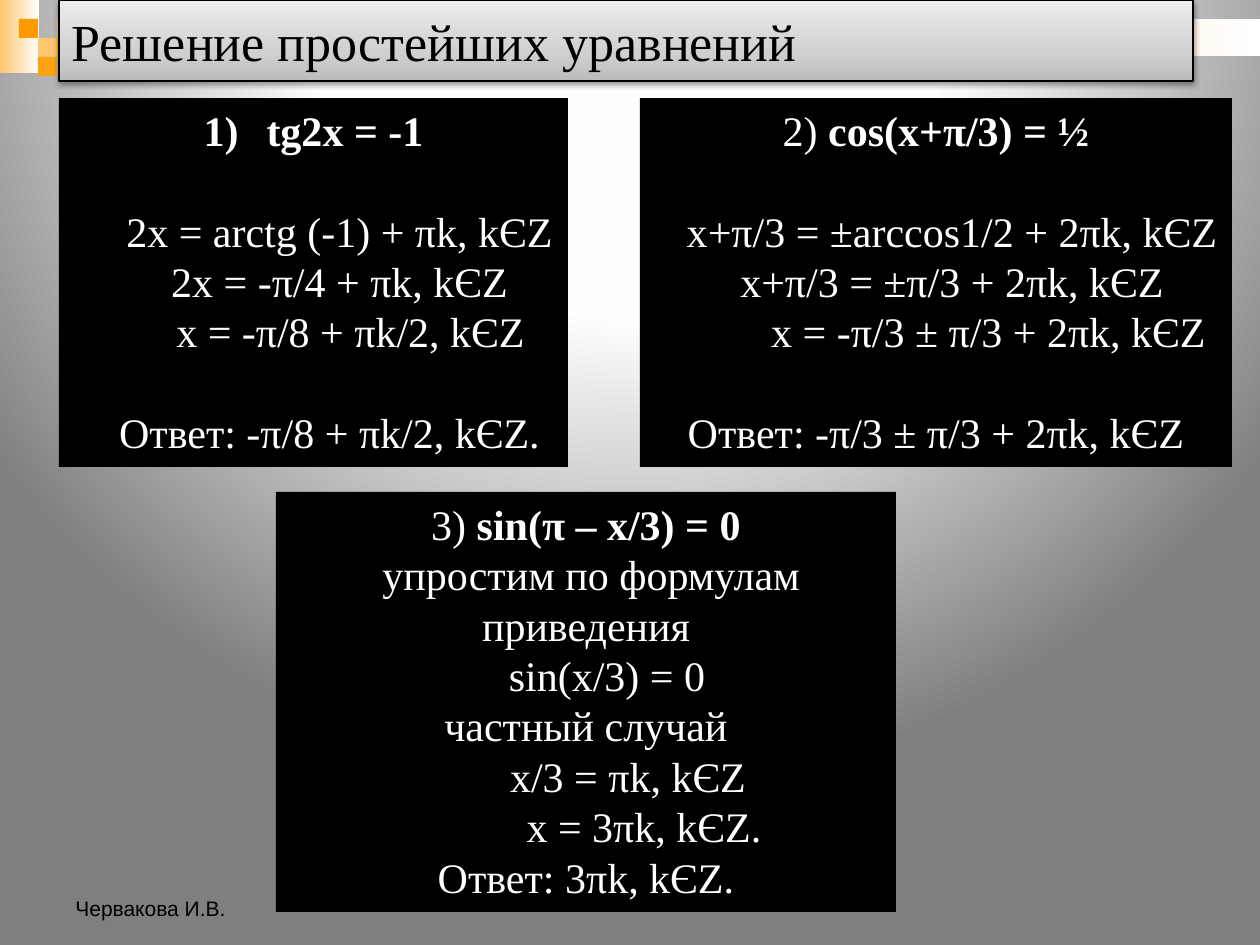
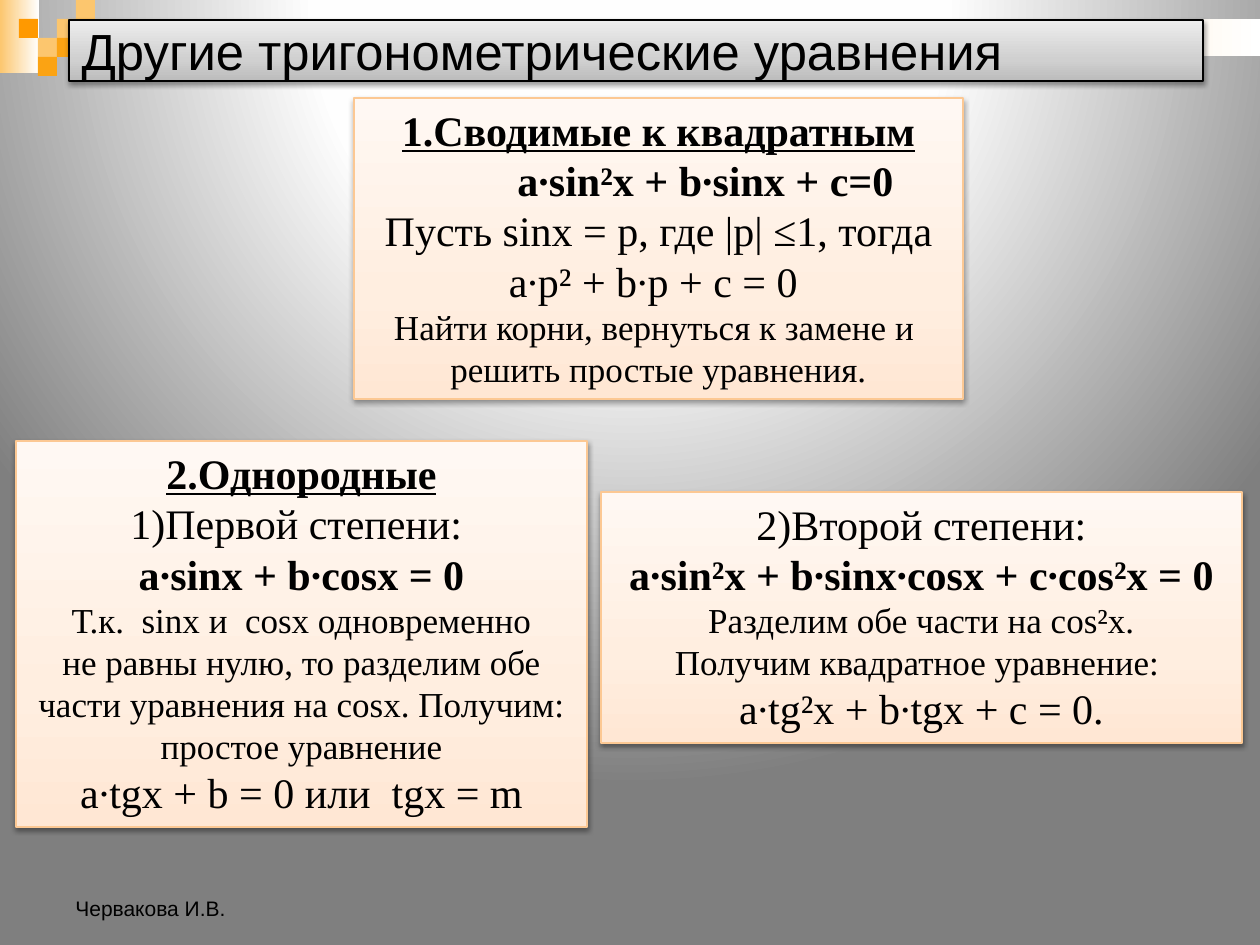
from dataclasses import dataclass

from lxml.etree import SubElement
from pptx import Presentation
from pptx.dml.color import RGBColor
from pptx.enum.shapes import MSO_SHAPE
from pptx.enum.text import MSO_ANCHOR, MSO_AUTO_SIZE, PP_ALIGN
from pptx.oxml import parse_xml
from pptx.oxml.ns import nsdecls, qn
from pptx.util import Emu, Pt

SERIF, SANS = "Times New Roman", "Arial"
BLACK, WHITE = "000000", "FFFFFF"
ORANGE, AMBER, PEACH = "FF9900", "FBA313", "FCC66E"
CARD_BORDER = "FCC893"

LEFT_TO_RIGHT = '<a:lin ang="0" scaled="0"/>'
BOTTOM_TO_TOP = '<a:lin ang="16200000" scaled="0"/>'
FROM_ABOVE = ('<a:path path="circle">'
              '<a:fillToRect l="50000" t="-80000" r="50000" b="180000"/></a:path>')
BACKDROP = ([(0, WHITE), (40, "FEFEFE"), (100, "7F7F7F")], FROM_ABOVE)
TITLE_FILL = ([(0, "BCBCBC"), (35, "D0D0D0"), (100, "EDEDED")], BOTTOM_TO_TOP)
CARD_FILL = ([(0, "FFE7D4"), (35, "FFEEE0"), (100, "FFF8F3")], BOTTOM_TO_TOP)
SIDE_FILL = ([(0, PEACH), (100, WHITE)], LEFT_TO_RIGHT)
BAND_FILL = ([(0, ORANGE), (100, WHITE)], LEFT_TO_RIGHT)

TILE = 19
TILES = [(3, 1, PEACH), (4, 0, PEACH), (4, 1, AMBER), (2, 2, PEACH),
         (1, 1, ORANGE), (3, 2, AMBER), (2, 3, AMBER)]  # column, row, colour


@dataclass
class Line:
    text: str
    bold: bool = False
    underline: bool = False
    size: int = 24
    lead: str = ""          # regular text before the main run
    shift: int = 0          # left indent, px
    after_gap: bool = False  # one free line above
    number: bool = False    # automatic "1)"


def px(length):
    return Emu(round(length * 914400 / 126))


def color(hex_code):
    return RGBColor.from_string(hex_code)


def assign(target, values):
    for name, value in values.items():
        setattr(target, name, value)


def place(shape, box):
    assign(shape, dict(zip(("left", "top", "width", "height"), map(px, box))))


def paint_gradient(fill, holder, gradient):
    stops, direction = gradient
    marks = "".join(f'<a:gs pos="{at * 1000}"><a:srgbClr val="{code}"/></a:gs>'
                    for at, code in stops)
    fill.solid()
    holder.replace(holder.find(qn("a:solidFill")), parse_xml(
        f'<a:gradFill {nsdecls("a")} rotWithShape="1">'
        f"<a:gsLst>{marks}</a:gsLst>{direction}</a:gradFill>"))


def paint(shape, fill, border=None, raised=False):
    if isinstance(fill, str):
        shape.fill.solid()
        shape.fill.fore_color.rgb = color(fill)
    else:
        paint_gradient(shape.fill, shape.element.spPr, fill)
    if border:
        shape.line.color.rgb = color(border)
        shape.line.width = Pt(0.75)
    else:
        shape.line.fill.background()
    shape.shadow.inherit = False
    if raised:
        effects = shape.element.spPr.find(qn("a:effectLst"))
        shade = SubElement(effects, qn("a:outerShdw"), blurRad="40000",
                           dist="20000", dir="5400000", rotWithShape="0")
        tint = SubElement(shade, qn("a:srgbClr"), val=BLACK)
        SubElement(tint, qn("a:alpha"), val="38000")


def add_rect(slide, box, fill, **look):
    rect = slide.shapes.add_shape(MSO_SHAPE.RECTANGLE, *map(px, box))
    paint(rect, fill, **look)
    return rect


def write(paragraph, text, ink, face, size, bold=False, underline=False):
    run = paragraph.add_run()
    run.text = text
    assign(run.font, {"name": face, "size": Pt(size), "bold": bold,
                      "underline": underline})
    run.font.color.rgb = color(ink)


def add_backdrop(slide):
    paint_gradient(slide.background.fill,
                   slide.element.find(".//" + qn("p:bgPr")), BACKDROP)
    # Corner strip, top band and mosaic
    add_rect(slide, (0, 0, 39, 73), SIDE_FILL)
    add_rect(slide, (57, 19, 1203, 37), BAND_FILL)
    for column, row, code in TILES:
        add_rect(slide, (column * TILE, row * TILE, TILE, TILE), code)


def add_title(slide, box, text, face, size):
    title = slide.shapes.title
    title.element.getparent().append(title.element)  # in front of the mosaic
    place(title, box)
    paint(title, TITLE_FILL, border=BLACK, raised=True)
    assign(title.text_frame, {"vertical_anchor": MSO_ANCHOR.MIDDLE,
                              "auto_size": MSO_AUTO_SIZE.NONE, "word_wrap": True})
    heading = title.text_frame.paragraphs[0]
    heading.alignment = PP_ALIGN.LEFT
    write(heading, text, BLACK, face, size)


def add_author(slide):
    author = slide.shapes.add_textbox(*map(px, (63, 861, 294, 66)))
    assign(author.text_frame, {"word_wrap": True,
                               "vertical_anchor": MSO_ANCHOR.BOTTOM})
    write(author.text_frame.paragraphs[0], "Червакова И.В.", BLACK, SANS, 12)


def add_lines(panel, lines, ink, wrap):
    frame = panel.text_frame
    assign(frame, {"word_wrap": wrap, "auto_size": MSO_AUTO_SIZE.SHAPE_TO_FIT_TEXT,
                   "vertical_anchor": MSO_ANCHOR.TOP})
    for index, line in enumerate(lines):
        paragraph = frame.add_paragraph() if index else frame.paragraphs[0]
        paragraph.alignment = PP_ALIGN.CENTER
        if line.after_gap:
            paragraph.space_before = Pt(line.size * 1.2)
        props = paragraph._p.get_or_add_pPr()
        if line.shift:
            props.set("marL", str(px(line.shift)))
        if line.number:
            props.set("marL", str(px(63)))
            props.set("indent", str(px(-63)))
            SubElement(props, qn("a:buFontTx"))
            SubElement(props, qn("a:buAutoNum"), type="arabicParenR")
        if line.lead:
            write(paragraph, line.lead, ink, SERIF, line.size)
        write(paragraph, line.text, ink, SERIF, line.size, line.bold, line.underline)


def add_board(slide, box, lines, wrap=False):
    add_lines(add_rect(slide, box, BLACK), lines, WHITE, wrap)


def add_card(slide, box, lines):
    card = add_rect(slide, box, CARD_FILL, border=CARD_BORDER, raised=True)
    add_lines(card, lines, BLACK, wrap=False)


def start_slide(deck, *title):
    slide = deck.slides.add_slide(deck.slide_layouts[5])
    add_backdrop(slide)
    add_title(slide, *title)
    return slide


def simple_equations(deck):
    slide = start_slide(deck, (59, 0, 1134, 81),
                        "Решение простейших уравнений", SERIF, 29.7)
    add_board(slide, (59, 98, 509, 369), [
        Line("tg2x = -1", bold=True, number=True),
        Line("2x = arctg (-1) + πk, kЄZ", shift=52, after_gap=True),
        Line("2x = -π/4 + πk, kЄZ", shift=52),
        Line("x = -π/8 + πk/2, kЄZ", shift=74),
        Line("Ответ: -π/8 + πk/2, kЄZ.", shift=32, after_gap=True),
    ])
    add_board(slide, (640, 98, 592, 369), [
        Line("cos(x+π/3) = ½", bold=True, lead="2) "),
        Line("x+π/3 = ±arccos1/2 + 2πk, kЄZ", shift=32, after_gap=True),
        Line("x+π/3 = ±π/3 + 2πk, kЄZ", shift=32),
        Line("x = -π/3 ± π/3 + 2πk, kЄZ", shift=105),
        Line("Ответ: -π/3 ± π/3 + 2πk, kЄZ", after_gap=True),
    ])
    add_board(slide, (276, 492, 620, 420), [
        Line("sin(π – x/3) = 0", bold=True, lead="3) "),
        Line(" упростим по формулам приведения"),
        Line("sin(x/3) = 0", shift=42),
        Line("частный случай"),
        Line("x/3 = πk, kЄZ", shift=84),
        Line("x = 3πk, kЄZ.", shift=116),
        Line("Ответ: 3πk, kЄZ."),
    ], wrap=True)
    add_author(slide)


def other_equations(deck):
    slide = start_slide(deck, (69, 20, 1134, 61),
                        "Другие тригонометрические уравнения", SANS, 29)
    add_card(slide, (354, 98, 609, 301), [
        Line("1.Сводимые к квадратным", bold=True, underline=True),
        Line("a∙sin²x + b∙sinx + c=0", bold=True, shift=94),
        Line("Пусть sinx = p, где |p| ≤1, тогда"),
        Line("a∙p² + b∙p + c = 0 "),
        Line("Найти корни, вернуться к замене и ", size=20),
        Line("решить простые уравнения.", size=20),
    ])
    add_card(slide, (16, 441, 571, 386), [
        Line("2.Однородные", bold=True, underline=True),
        Line("1)Первой степени: "),
        Line("a∙sinx + b∙cosx = 0", bold=True),
        Line("Т.к.  sinx и  cosx одновременно", size=20),
        Line("не равны нулю, то разделим обе", size=20),
        Line("части уравнения на cosx. Получим:", size=20),
        Line("простое уравнение", size=20),
        Line("a∙tgx + b = 0 или  tgx = m"),
    ])
    add_card(slide, (601, 492, 641, 251), [
        Line("2)Второй степени:"),
        Line("a∙sin²x + b∙sinx∙cosx + c∙cos²x = 0", bold=True),
        Line("Разделим обе части на cos²x.", size=20),
        Line("Получим квадратное уравнение: ", size=20),
        Line("a∙tg²x + b∙tgx + c = 0."),
    ])
    add_author(slide)


def main():
    deck = Presentation()
    assign(deck, {"slide_width": px(1260), "slide_height": px(945)})
    simple_equations(deck)
    other_equations(deck)
    deck.save("out.pptx")


if __name__ == "__main__":
    main()
